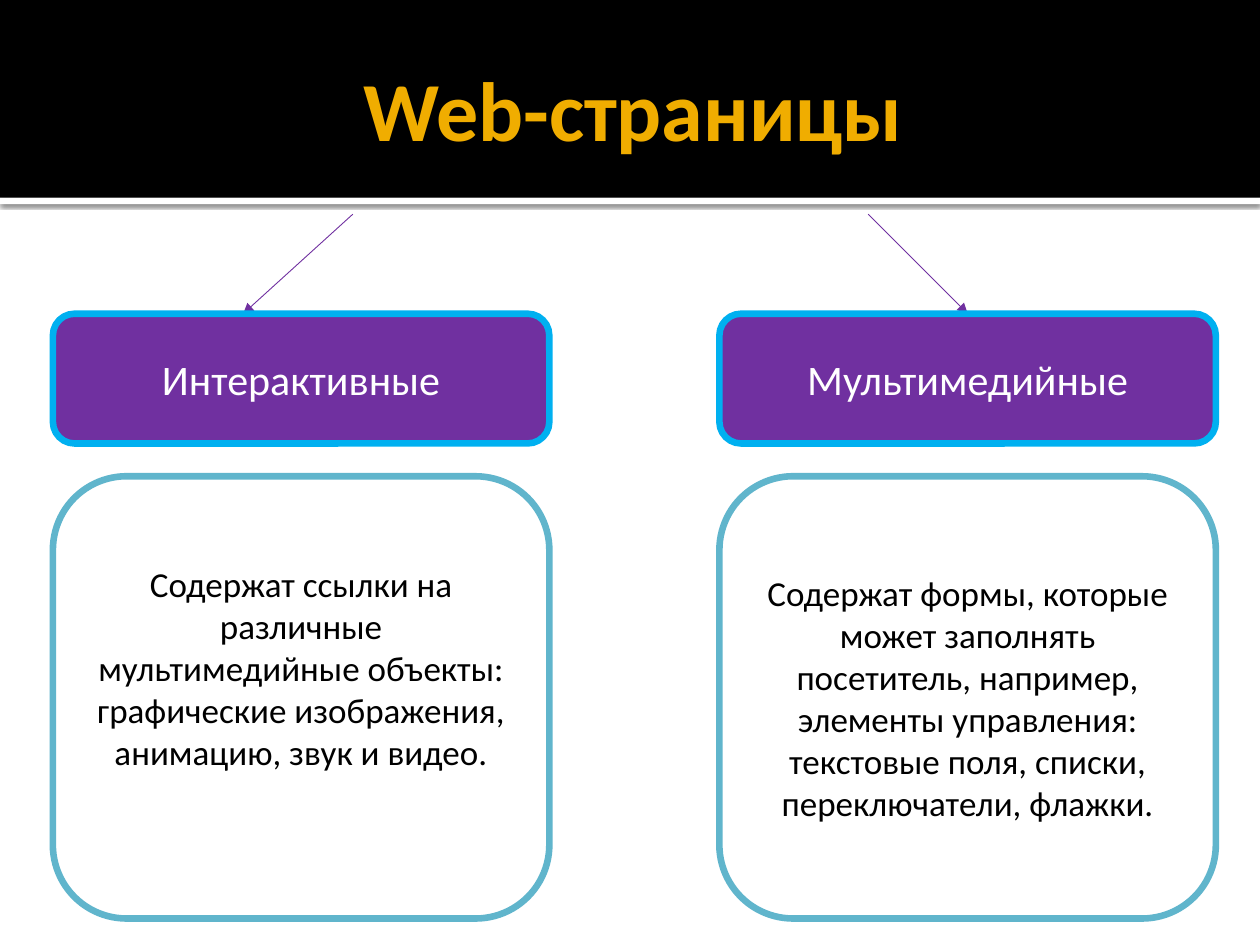
from lxml.etree import SubElement
from pptx import Presentation
from pptx.dml.color import RGBColor
from pptx.enum.shapes import MSO_CONNECTOR, MSO_SHAPE
from pptx.enum.text import MSO_ANCHOR, PP_ALIGN
from pptx.oxml.ns import qn
from pptx.util import Inches, Pt

BLACK = RGBColor(0x00, 0x00, 0x00)
WHITE = RGBColor(0xFF, 0xFF, 0xFF)
GOLD = RGBColor(0xF0, 0xAD, 0x00)
PURPLE = RGBColor(0x70, 0x30, 0xA0)
BLUE = RGBColor(0x00, 0xB0, 0xF0)
TEAL = RGBColor(0x60, 0xB5, 0xCC)

BOX_WIDTH = 3.94
# Left edge, arrow start and end, heading, description, bottom inset
COLUMNS = [
    (0.42, 2.8, 1.93, "Интерактивные",
     ["Содержат ссылки на различные мультимедийные объекты: "
      "графические изображения, анимацию, звук и видео."], 0.52),
    (5.71, 6.89, 7.68, "Мультимедийные",
     ["Содержат формы, которые может заполнять посетитель, например,",
      "элементы управления: текстовые поля, списки, переключатели, флажки."], 0.05),
]


def write_text(shape, lines, size, color, bold=False, **margins):
    frame = shape.text_frame
    frame.text = "\n".join(lines)
    frame_format = {"word_wrap": True, "vertical_anchor": MSO_ANCHOR.MIDDLE, **margins}
    for name, value in frame_format.items():
        setattr(frame, name, value)
    for paragraph in frame.paragraphs:
        paragraph.alignment = PP_ALIGN.CENTER
        font = paragraph.runs[0].font
        for name, value in {"name": "Calibri", "size": Pt(size), "bold": bold}.items():
            setattr(font, name, value)
        font.color.rgb = color


def add_bar(slide, top, height, color):
    bar = slide.shapes.add_shape(
        MSO_SHAPE.RECTANGLE, 0, Inches(top), Inches(10), Inches(height))
    bar.shadow.inherit = False
    bar.fill.solid()
    bar.fill.fore_color.rgb = color
    bar.line.fill.background()
    return bar


def add_bar_shadow(bar):
    effects = bar._element.spPr.find(qn("a:effectLst"))
    shadow = SubElement(effects, qn("a:outerShdw"), blurRad=str(Pt(2.5)),
                        dist=str(Pt(0.8)), dir="5400000", rotWithShape="0")
    color = SubElement(shadow, qn("a:srgbClr"), val=str(BLACK))
    SubElement(color, qn("a:alpha"), val="60000")


def add_title(slide, text):
    title = slide.shapes.title
    place = {"left": 0.5, "top": 0.17, "width": 9, "height": 1.37}
    for name, value in place.items():
        setattr(title, name, Inches(value))
    write_text(title, [text], 48, GOLD, bold=True, margin_right=Inches(0.05))
    # Bring the title in front of the bars
    slide.shapes._spTree.append(title._element)


def add_box(shapes, left, top, height, fill, outline):
    box = shapes.add_shape(MSO_SHAPE.ROUNDED_RECTANGLE, Inches(left), Inches(top),
                           Inches(BOX_WIDTH), Inches(height))
    box.shadow.inherit = False
    box.fill.solid()
    box.fill.fore_color.rgb = fill
    box.line.color.rgb = outline
    box.line.width = Pt(3.78)
    return box


def add_arrow(shapes, start_x, end_x):
    arrow = shapes.add_connector(MSO_CONNECTOR.STRAIGHT, Inches(start_x), Inches(1.7),
                                 Inches(end_x), Inches(2.49))
    arrow.line.color.rgb = PURPLE
    arrow.line.width = Pt(0.5)
    SubElement(arrow.line._get_or_add_ln(), qn("a:tailEnd"), type="triangle")
    SubElement(arrow._element.spPr, qn("a:effectLst"))


def main():
    presentation = Presentation()
    presentation.slide_width = Inches(10)
    presentation.slide_height = Inches(7.5)
    slide = presentation.slides.add_slide(presentation.slide_layouts[5])

    # Header
    add_bar_shadow(add_bar(slide, 1.57, 0.05, WHITE))
    add_bar(slide, 0, 1.57, BLACK)
    add_title(slide, "Web-страницы")

    # Two kinds of pages: arrow, heading and description
    group = slide.shapes.add_group_shape()
    for left, start_x, end_x, heading, description, inset in COLUMNS:
        add_arrow(group.shapes, start_x, end_x)
        heading_box = add_box(group.shapes, left, 2.49, 1.03, PURPLE, BLUE)
        write_text(heading_box, [heading], 24, WHITE)
        description_box = add_box(slide.shapes, left, 3.78, 3.51, WHITE, TEAL)
        write_text(description_box, description, 20, BLACK, margin_bottom=Inches(inset))

    presentation.save("out.pptx")


if __name__ == "__main__":
    main()
